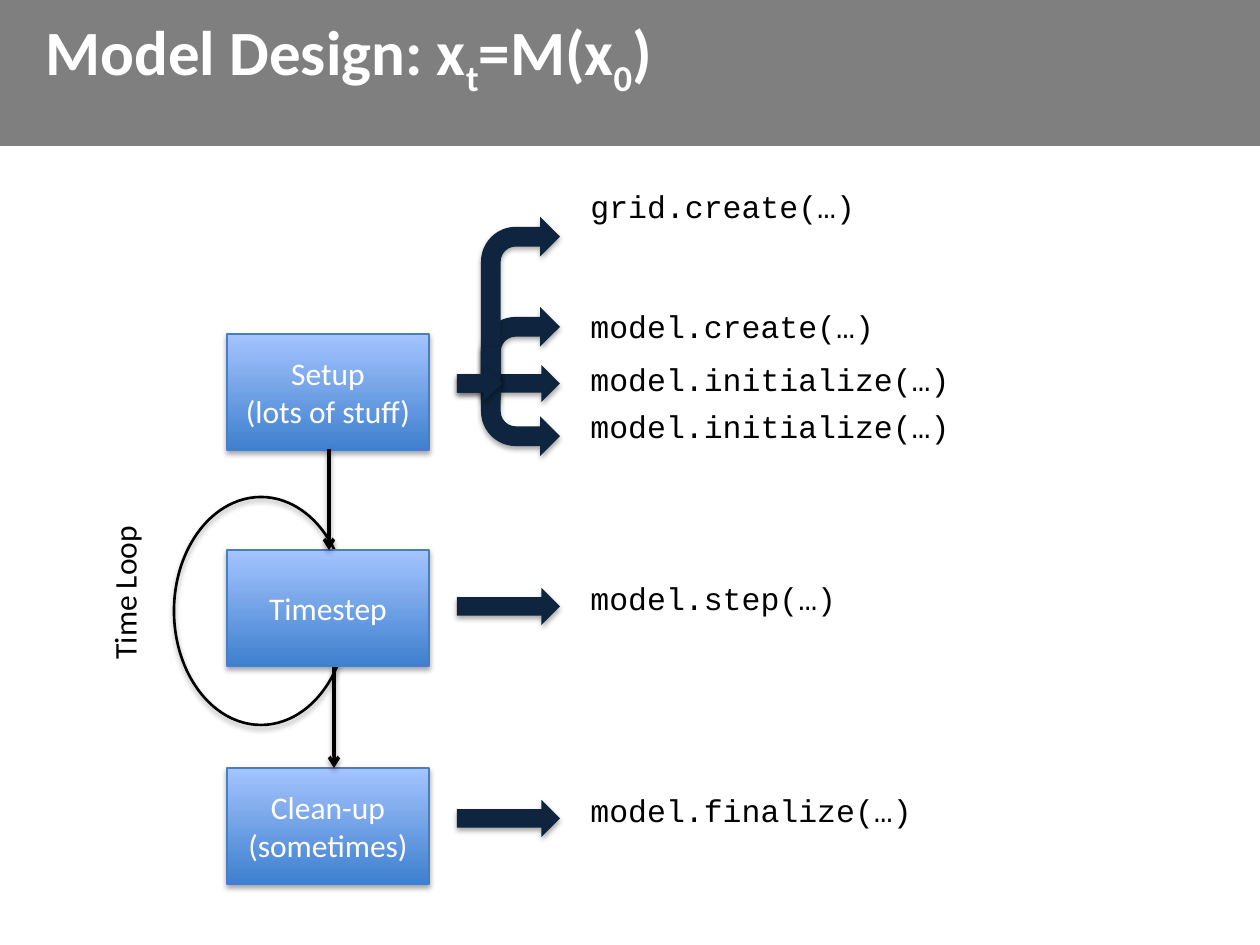
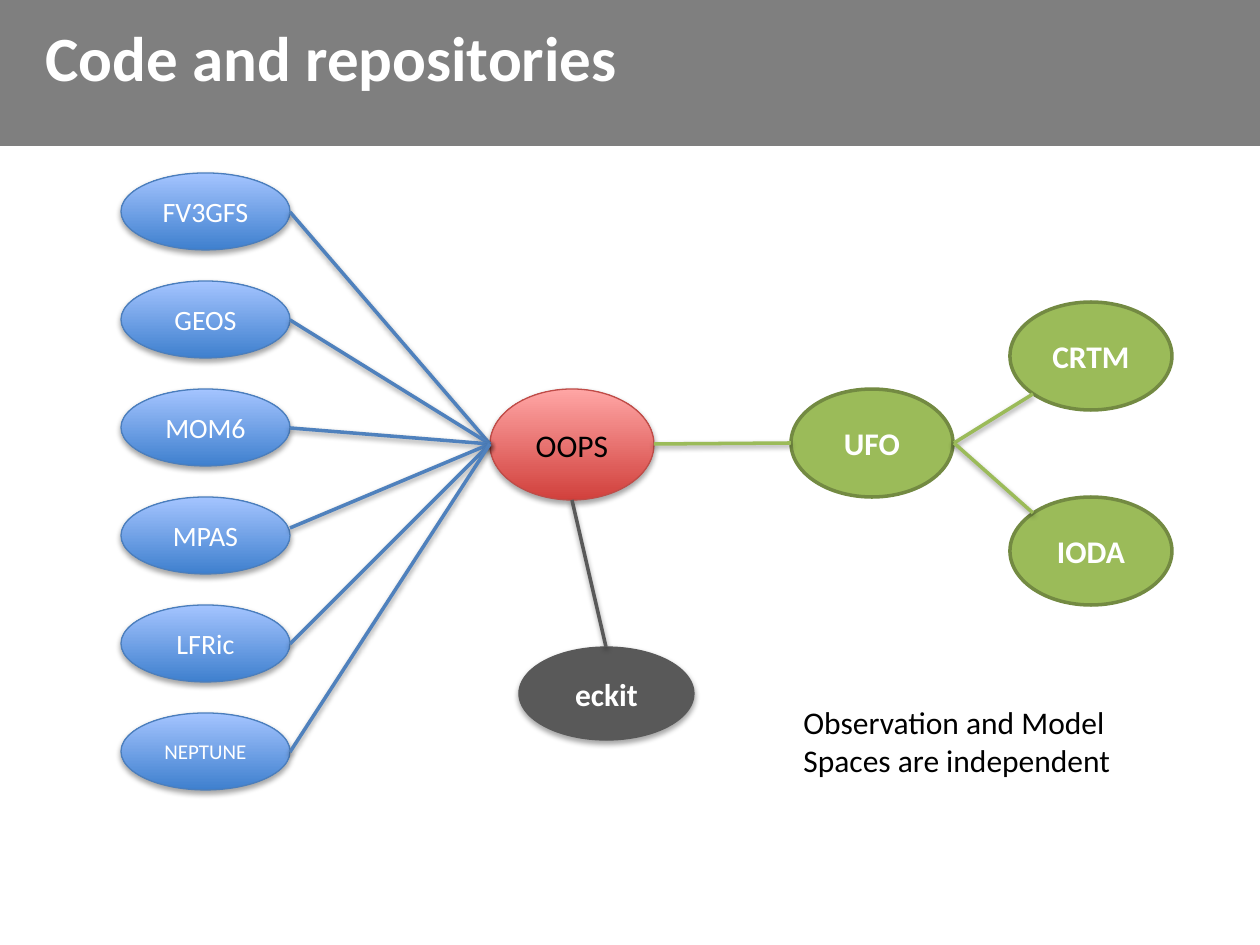
from lxml import etree
from pptx import Presentation
from pptx.dml.color import RGBColor
from pptx.enum.shapes import MSO_CONNECTOR, MSO_SHAPE
from pptx.enum.text import MSO_ANCHOR, MSO_AUTO_SIZE, PP_ALIGN
from pptx.oxml.ns import qn
from pptx.util import Emu, Pt

RECT, ELLIPSE = MSO_SHAPE.RECTANGLE, MSO_SHAPE.OVAL
PROCESS = MSO_SHAPE.FLOWCHART_PROCESS
ARROW, BENT = MSO_SHAPE.RIGHT_ARROW, MSO_SHAPE.BENT_ARROW
STRAIGHT = MSO_CONNECTOR.STRAIGHT
LEFT, CENTER = PP_ALIGN.LEFT, PP_ALIGN.CENTER
MIDDLE, TOP = MSO_ANCHOR.MIDDLE, MSO_ANCHOR.TOP
NO_FIT = MSO_AUTO_SIZE.NONE

SANS, MONO = "Calibri", "Courier New"
BLACK, WHITE, NAVY = "000000", "FFFFFF", "0F243E"
BLUE, GREEN, GRAY = "4F81BD", "9BBB59", "595959"
BLUE_FILL, BLUE_EDGE = ("3F80CE", "A4C4FF"), "4B7EBC"
RED_FILL, RED_EDGE = ("D1403C", "FFA6A5"), "BF4C48"
GREEN_EDGE = "738A42"
TITLE_ONLY = 5


def px(n):
    return Emu(round(n * 914400 / 126))


def rgb(color):
    return RGBColor.from_string(color)


def add_shadow(effects, alpha, dist):
    shadow = etree.SubElement(effects, qn("a:outerShdw"), blurRad="40000",
                              dist=str(dist), dir="5400000", rotWithShape="0")
    color = etree.SubElement(shadow, qn("a:srgbClr"), val=BLACK)
    etree.SubElement(color, qn("a:alpha"), val=str(alpha * 1000))


def write(tf, text, size=18, color=BLACK, font=SANS, bold=False,
          align=LEFT, anchor=TOP, wrap=True):
    tf.word_wrap = wrap
    tf.auto_size = NO_FIT
    tf.vertical_anchor = anchor
    for i, line in enumerate(text.split("\n")):
        p = tf.paragraphs[0] if i == 0 else tf.add_paragraph()
        p.alignment = align
        for j, part in enumerate(line.split("~")):
            r = p.add_run()
            r.text = part
            r.font.size, r.font.name, r.font.bold = Pt(size), font, bold
            r.font.color.rgb = rgb(color)
            if j % 2:
                r._r.get_or_add_rPr().set("baseline", "-25000")


class Deck:
    def __init__(self):
        self.prs = Presentation()
        self.prs.slide_width, self.prs.slide_height = px(1260), px(945)
        self.layout = self.prs.slide_layouts[TITLE_ONLY]
        self.s = None

    def slide(self, title):
        first = self.s is None
        self.s = self.prs.slides.add_slide(self.layout)
        if first:
            self.band()
        sp = self.s.shapes.title
        sp.left, sp.top, sp.width, sp.height = px(33), px(0), px(1164), px(112)
        write(sp.text_frame, title, size=36, color=WHITE, bold=True, anchor=MIDDLE)

    def band(self):
        sp = self.shape(RECT, 0, 0, 1260, 146, fill=BLACK, shadow=False)
        color = sp._element.spPr.find(qn("a:solidFill"))[0]
        etree.SubElement(color, qn("a:alpha"), val="50000")
        self.layout.shapes._spTree.insert(2, sp._element)

    def shape(self, kind, x, y, w, h, fill=None, line=None, weight=0.75,
              shadow=True, text=None, **fmt):
        sp = self.s.shapes.add_shape(kind, px(x), px(y), px(w), px(h))
        sp.shadow.inherit = False
        if shadow:
            add_shadow(sp._element.spPr.find(qn("a:effectLst")), 35, 23000)
        if fill is None:
            sp.fill.background()
        elif isinstance(fill, tuple):
            sp.fill.gradient()
            sp.fill.gradient_angle = 90
            for stop, color in zip(sp.fill.gradient_stops, fill):
                stop.color.rgb = rgb(color)
        else:
            sp.fill.solid()
            sp.fill.fore_color.rgb = rgb(fill)
        if line:
            sp.line.color.rgb = rgb(line)
            sp.line.width = Pt(weight)
        else:
            sp.line.fill.background()
        if text:
            write(sp.text_frame, text, align=CENTER, anchor=MIDDLE, **fmt)
        return sp

    def bent_arrow(self, y, h, flip=False):
        sp = self.shape(BENT, 481, y, 79, h, fill=NAVY)
        for i, value in enumerate((0.25, 0.25, 0.25, 0.44)):
            sp.adjustments[i] = value
        if flip:
            sp._element.spPr.get_or_add_xfrm().set("flipV", "1")

    def line(self, x1, y1, x2, y2, color=BLACK, arrow=False):
        sp = self.s.shapes.add_connector(STRAIGHT, px(x1), px(y1), px(x2), px(y2))
        sp.line.color.rgb = rgb(color)
        sp.line.width = Pt(2)
        spPr = sp._element.spPr
        if arrow:
            etree.SubElement(spPr.find(qn("a:ln")), qn("a:tailEnd"), type="arrow")
        add_shadow(etree.SubElement(spPr, qn("a:effectLst")), 38, 20000)

    def text(self, x, y, w, h, text, vert=None, **fmt):
        sp = self.s.shapes.add_textbox(px(x), px(y), px(w), px(h))
        write(sp.text_frame, text, wrap=False, **fmt)
        if vert:
            sp.text_frame._txBody.bodyPr.set("vert", vert)


def model_design(d):
    d.slide("Model Design: x~t~=M(x~0~)")
    d.shape(ELLIPSE, 174, 497, 174, 228, line=BLACK, weight=1.5)
    for y, step in ((334, "Setup\n(lots of stuff)"), (550, "Timestep"),
                    (768, "Clean-up\n(sometimes)")):
        d.shape(PROCESS, 227, y, 202, 116, fill=BLUE_FILL, line=BLUE_EDGE,
                text=step, color=WHITE)
    d.line(329, 449, 329, 550, arrow=True)
    d.line(334, 667, 334, 768, arrow=True)
    d.text(99, 524, 63, 148, "Time Loop", vert="vert270")

    for y in (365, 588, 800):
        d.shape(ARROW, 457, y, 103, 37, fill=NAVY)
    d.bent_arrow(307, 93)
    d.bent_arrow(217, 163)
    d.bent_arrow(347, 109, flip=True)
    d.shape(ARROW, 457, 365, 45, 37, fill=NAVY)

    for y, call in ((181, "grid.create(…)"), (301, "model.create(…)"),
                    (354, "model.initialize(…)"), (401, "model.initialize(…)"),
                    (573, "model.step(…)"), (785, "model.finalize(…)")):
        d.text(578, y, 25 + 19 * len(call), 50, call, font=MONO)


def repositories(d):
    d.slide("Code and repositories")
    d.shape(ELLIPSE, 490, 389, 164, 111, fill=RED_FILL, line=RED_EDGE, text="OOPS")
    models = ("FV3GFS", "GEOS", "MOM6", "MPAS", "LFRic", "NEPTUNE")
    for i, model in enumerate(models):
        d.shape(ELLIPSE, 121, 173 + 108 * i, 169, 77, fill=BLUE_FILL,
                line=BLUE_EDGE, text=model, color=WHITE,
                size=12 if model == "NEPTUNE" else 16)
    for x, y, name in ((791, 389, "UFO"), (1010, 497, "IODA"), (1010, 302, "CRTM")):
        d.shape(ELLIPSE, x, y, 162, 108, fill=GREEN, line=GREEN_EDGE, weight=2,
                shadow=False, text=name, color=WHITE, bold=True)
    for i, model in enumerate(models):
        d.line(290, 528 if model == "MPAS" else 212 + 108 * i, 490, 444, BLUE)
    for ends in ((654, 444, 791, 443), (954, 443, 1033, 394), (954, 443, 1033, 513)):
        d.line(*ends, GREEN)
    d.shape(ELLIPSE, 519, 647, 175, 93, fill=GRAY, line=GRAY, text="eckit",
            color=WHITE, bold=True)
    d.line(572, 500, 606, 647, GRAY)
    d.text(791, 697, 336, 89, "Observation and Model\nSpaces are independent")


def main():
    d = Deck()
    model_design(d)
    repositories(d)
    d.prs.save("out.pptx")


if __name__ == "__main__":
    main()
